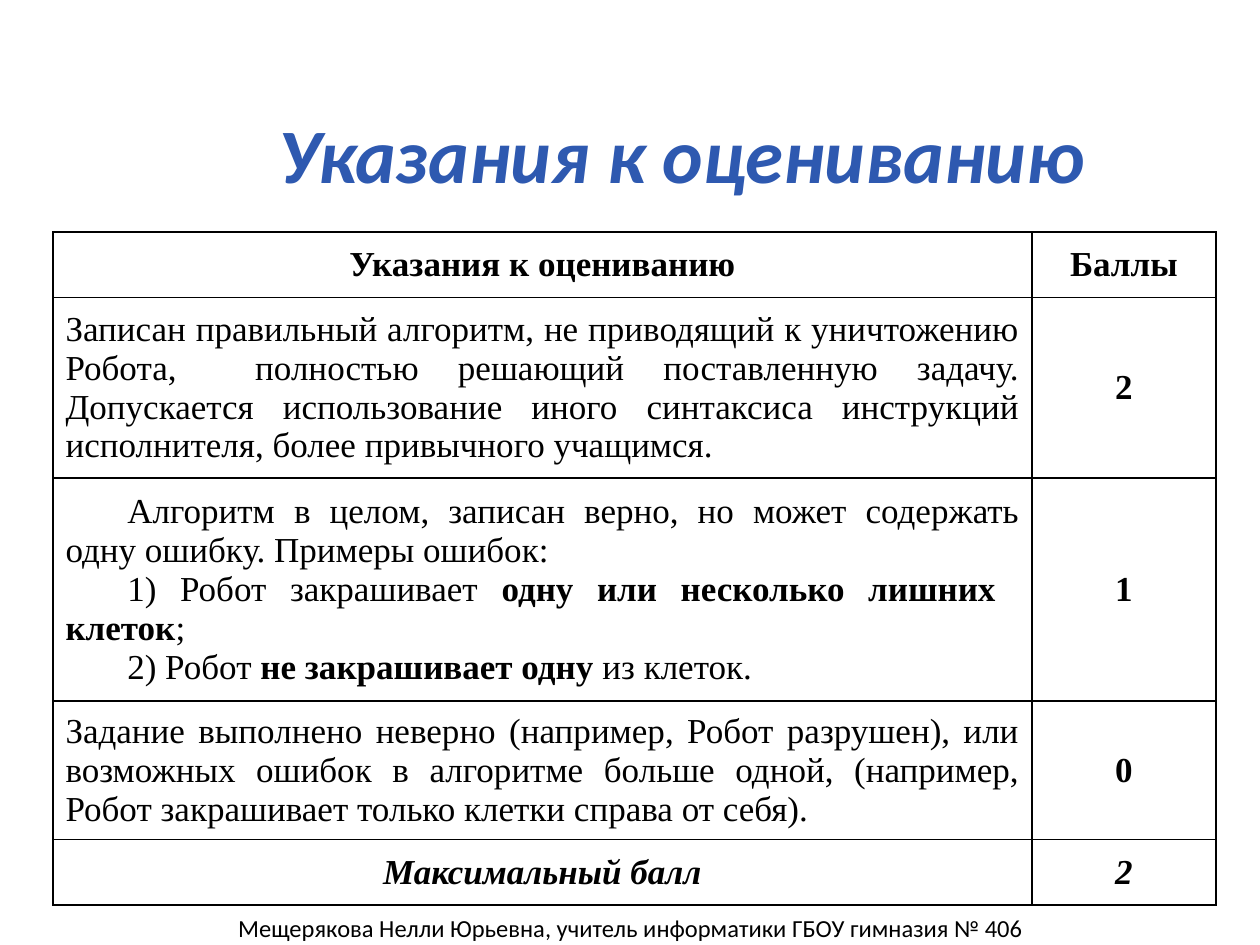
"""Build a slide with the scoring guidelines for a Robot programming task."""
from dataclasses import dataclass

from lxml import etree
from pptx import Presentation
from pptx.dml.color import RGBColor
from pptx.enum.text import MSO_ANCHOR, PP_ALIGN
from pptx.oxml.ns import qn
from pptx.util import Inches, Pt

CENTER, JUSTIFY, LEFT = PP_ALIGN.CENTER, PP_ALIGN.JUSTIFY, PP_ALIGN.LEFT
MIDDLE, TOP = MSO_ANCHOR.MIDDLE, MSO_ANCHOR.TOP
BLANK_LAYOUT = 6


@dataclass(frozen=True)
class Theme:
    title_color: str = "2E59B0"
    text_color: str = "000000"
    border_color: str = "000000"
    cell_color: str = "FFFFFF"
    heading_font: str = "Calibri"
    table_font: str = "Times New Roman"
    title_size: int = 44
    table_size: int = 20
    footer_size: int = 14
    border_width: int = 1
    first_line_indent: float = 0.49


def add_text(paragraph, text, *, font, size, color, bold=False, italic=False):
    run = paragraph.add_run()
    run.text = text
    run.font.name = font
    run.font.size = Pt(size)
    run.font.color.rgb = RGBColor.from_string(color)
    run.font.bold = bold
    run.font.italic = italic


class SlideBuilder:
    def __init__(self, slide, theme):
        self.slide = slide
        self.theme = theme

    def text_box(self, text, left, top, width, height, margin=None, line_spacing=None, **text_format):
        shape = self.slide.shapes.add_textbox(Inches(left), Inches(top), Inches(width), Inches(height))
        frame = shape.text_frame
        frame.word_wrap = True
        frame.vertical_anchor = TOP
        if margin is not None:
            frame.margin_left = frame.margin_right = Inches(margin)
            frame.margin_top = frame.margin_bottom = Inches(margin)
        paragraph = frame.paragraphs[0]
        paragraph.alignment = CENTER
        paragraph.line_spacing = line_spacing
        add_text(paragraph, text, **text_format)

    def table(self, rows, left, top, column_widths, row_heights):
        shape = self.slide.shapes.add_table(
            len(rows), len(column_widths), Inches(left), Inches(top),
            Inches(sum(column_widths)), Inches(sum(row_heights)))
        table = shape.table
        table.first_row = table.horz_banding = False
        for column, width in zip(table.columns, column_widths):
            column.width = Inches(width)
        for row, height, contents in zip(table.rows, row_heights, rows):
            row.height = Inches(height)
            for cell, paragraphs in zip(row.cells, contents):
                self.cell(cell, paragraphs)

    def cell(self, cell, paragraphs):
        self.borders(cell)
        cell.fill.solid()
        cell.fill.fore_color.rgb = RGBColor.from_string(self.theme.cell_color)
        cell.vertical_anchor = MIDDLE
        frame = cell.text_frame
        for index, (alignment, indent, runs) in enumerate(paragraphs):
            paragraph = frame.add_paragraph() if index else frame.paragraphs[0]
            paragraph.alignment = alignment
            if indent:
                properties = paragraph._p.get_or_add_pPr()
                properties.set("marL", "0")
                properties.set("indent", str(Inches(indent)))
            for text, style in runs:
                add_text(paragraph, text, font=self.theme.table_font, size=self.theme.table_size,
                         color=self.theme.text_color, **style)

    def borders(self, cell):
        properties = cell._tc.get_or_add_tcPr()
        for side in ("a:lnL", "a:lnR", "a:lnT", "a:lnB"):
            line = etree.SubElement(properties, qn(side), w=str(Pt(self.theme.border_width)))
            fill = etree.SubElement(line, qn("a:solidFill"))
            etree.SubElement(fill, qn("a:srgbClr"), val=self.theme.border_color)


def centered(text, **style):
    return [(CENTER, 0, [(text, {"bold": True, **style})])]


def justified(text):
    return [(JUSTIFY, 0, [(text, {})])]


def scoring_rows(theme):
    bold = {"bold": True}
    indent = theme.first_line_indent
    one_point = [
        (JUSTIFY, indent, [
            ("Алгоритм в целом, записан верно, но может содержать одну ошибку. Примеры ошибок:", {})]),
        (JUSTIFY, indent, [
            ("1) Робот закрашивает ", {}), ("одну или несколько лишних  клеток", bold), (";", {})]),
        (LEFT, indent, [
            ("2) Робот ", {}), ("не закрашивает одну", bold), (" из клеток.", {})]),
    ]
    return [
        (centered("Указания к оцениванию"), centered("Баллы")),
        (justified("Записан правильный алгоритм, не приводящий к уничтожению Робота,  полностью "
                   "решающий поставленную задачу. Допускается использование иного синтаксиса "
                   "инструкций исполнителя, более привычного учащимся."), centered("2")),
        (one_point, centered("1")),
        (justified("Задание выполнено неверно (например, Робот разрушен), или возможных ошибок "
                   "в алгоритме больше одной, (например, Робот закрашивает только клетки справа "
                   "от себя)."), centered("0")),
        (centered("Максимальный балл", italic=True), centered("2", italic=True)),
    ]


def main():
    theme = Theme()
    presentation = Presentation()
    presentation.slide_width = Inches(10)
    presentation.slide_height = Inches(7.5)
    slide = presentation.slides.add_slide(presentation.slide_layouts[BLANK_LAYOUT])
    builder = SlideBuilder(slide, theme)
    builder.text_box("Мещерякова Нелли Юрьевна, учитель информатики ГБОУ гимназия № 406",
                     0.2, 7.2, 9.61, 0.33, font=theme.heading_font,
                     size=theme.footer_size, color=theme.text_color)
    builder.text_box("Указания к оцениванию", 0.83, 0.93, 9.17, 1.33, margin=0, line_spacing=0.9,
                     font=theme.heading_font, size=theme.title_size, color=theme.title_color,
                     bold=True, italic=True)
    builder.table(scoring_rows(theme), 0.42, 1.84, [7.77, 1.46], [0.52, 1.43, 1.77, 1.1, 0.52])
    presentation.save("out.pptx")


if __name__ == "__main__":
    main()
